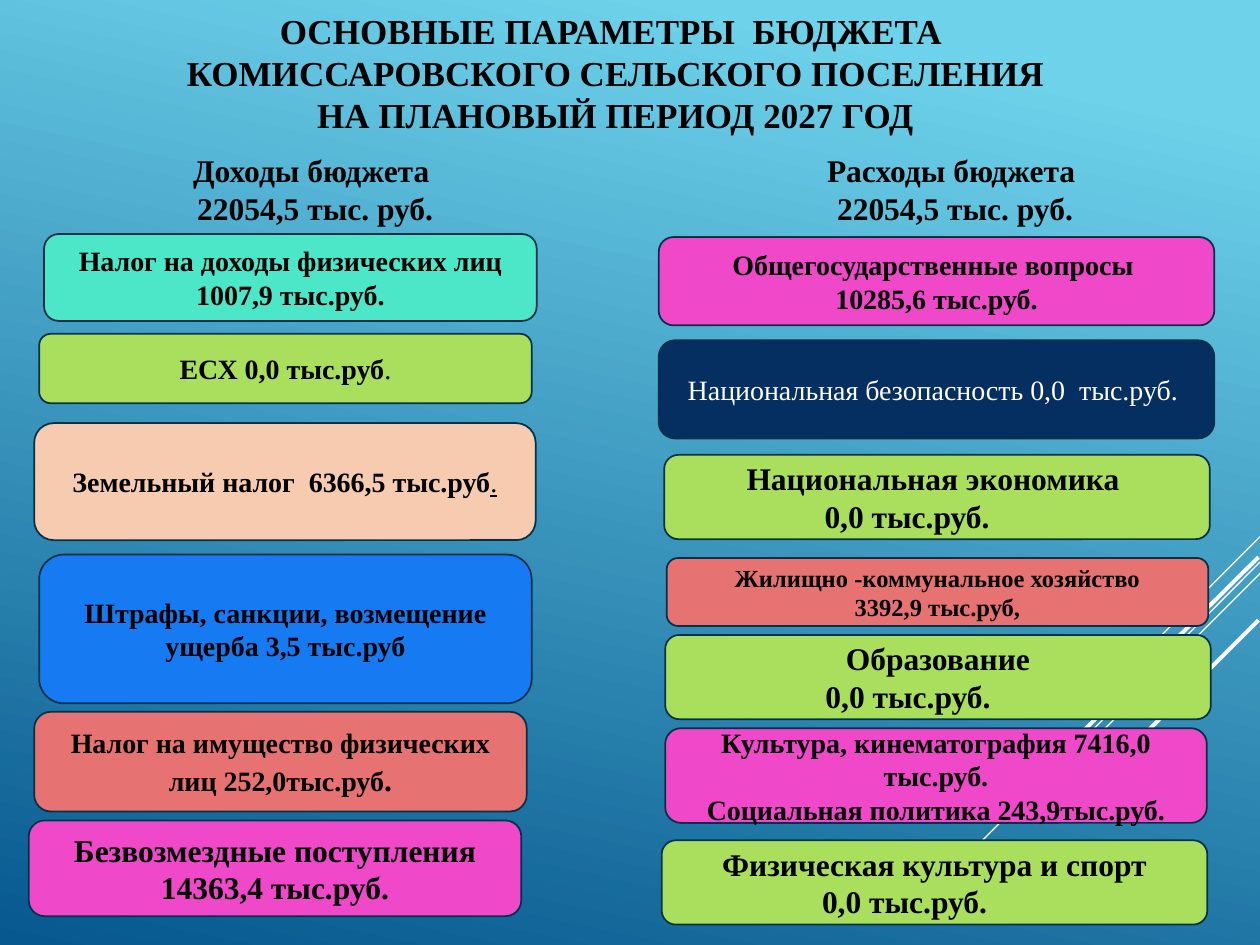
from lxml.etree import SubElement
from pptx import Presentation
from pptx.dml.color import RGBColor
from pptx.enum.shapes import MSO_CONNECTOR as CONN, MSO_SHAPE as SHAPE
from pptx.enum.text import MSO_ANCHOR as ANCHOR, PP_ALIGN as ALIGN
from pptx.oxml.ns import qn
from pptx.util import Cm, Pt

BLACK = RGBColor(0x00, 0x00, 0x00)
WHITE = RGBColor(0xFF, 0xFF, 0xFF)
SKY = RGBColor(0x6E, 0xD2, 0xEB)
DEEP = RGBColor(0x06, 0x58, 0x8E)
OUTLINE = RGBColor(0x04, 0x31, 0x48)
TEAL = RGBColor(0x4B, 0xE7, 0xC8)
GREEN = RGBColor(0xAA, 0xDF, 0x5E)
PEACH = RGBColor(0xF6, 0xCB, 0xAF)
BLUE = RGBColor(0x16, 0x7B, 0xF3)
CORAL = RGBColor(0xE6, 0x72, 0x72)
PINK = RGBColor(0xEF, 0x48, 0xC9)
NAVY = RGBColor(0x05, 0x2F, 0x61)

TITLE = ("ОСНОВНЫЕ ПАРАМЕТРЫ  БЮДЖЕТА \n КОМИССАРОВСКОГО СЕЛЬСКОГО ПОСЕЛЕНИЯ \n"
         "НА ПЛАНОВЫЙ ПЕРИОД 2027 ГОД")

HEADINGS = [
    ((0.79, 2.92, 11.13, 1.8), ["Доходы бюджета ", " 22054,5 тыс. руб. "]),
    ((14.1, 2.92, 10.31, 1.8), ["Расходы бюджета ", "22054,5 тыс. руб."]),
]

RAYS = [
    (25.4, 10.82, 23.29, 12.93, 0.75),
    (25.4, 11.33, 18.54, 18.21, 0.75),
    (25.4, 11.56, 21.03, 15.93, 0.75),
    (25.37, 11.23, 21.36, 15.21, 2.25),
    (25.37, 12.5, 22.48, 15.39, 2.25),
]

ZERO = "0,0 тыс.руб."

INCOME = [
    ((0.89, 4.72, 9.93, 1.75), TEAL, 16, ["Налог на доходы физических лиц 1007,9 тыс.руб."], {}),
    ((0.79, 6.73, 9.93, 1.4), GREEN, 16, ["ЕСХ 0,0 тыс.руб"],
     {"tail": {"bold": False}}),
    ((0.69, 8.53, 10.11, 2.36), PEACH, 16, ["Земельный налог  6366,5 тыс.руб"],
     {"tail": {"bold": False, "underline": True}}),
    ((0.79, 11.18, 9.93, 3), BLUE, 16, ["Штрафы, санкции, возмещение ущерба 3,5 тыс.руб"], {}),
    ((0.69, 14.35, 9.93, 2.01), CORAL, 16, ["Налог на имущество физических лиц 252,0тыс.руб"],
     {"tail": {"size": Pt(18)}}),
    ((0.58, 16.54, 9.93, 1.93), PINK, 18, ["Безвозмездные поступления", "14363,4 тыс.руб."], {}),
]

EXPENSES = [
    ((13.28, 4.78, 11.2, 1.78), PINK, 16,
     ["Общегосударственные вопросы ", "10285,6 тыс.руб."], {}),
    ((13.28, 6.86, 11.2, 1.98), NAVY, 16, ["Национальная безопасность 0,0  тыс.руб. "],
     {"color": WHITE, "bold": False}),
    ((13.39, 9.17, 11, 1.7), GREEN, 18, ["Национальная экономика ", ZERO], {}),
    ((13.44, 11.25, 10.92, 1.37), CORAL, 14,
     ["Жилищно -коммунальное хозяйство", "3392,9 тыс.руб,"], {}),
    ((13.41, 12.8, 11, 1.7), GREEN, 18, ["Образование", ZERO], {}),
    ((13.41, 14.68, 10.92, 1.91), PINK, 16,
     ["Культура, кинематография 7416,0 тыс.руб.", "Социальная политика 243,9тыс.руб."], {}),
    ((13.34, 16.94, 11, 1.7), GREEN, 18, ["Физическая культура и спорт", ZERO], {}),
]


class BudgetSlide:
    font = "Times New Roman"
    zero_indent = Cm(2.9)

    def __init__(self, prs):
        self.slide = prs.slides.add_slide(prs.slide_layouts[6])

    def background(self, start, end, angle):
        fill = self.slide.background.fill
        fill.gradient()
        fill.gradient_angle = 360 - angle
        for stop, color, position in zip(fill.gradient_stops, (start, end), (0.1, 1)):
            stop.color.rgb = color
            stop.position = position

    def ray(self, x1, y1, x2, y2, width):
        line = self.slide.shapes.add_connector(CONN.STRAIGHT, Cm(x1), Cm(y1), Cm(x2), Cm(y2))
        line.line.color.rgb = WHITE
        line.line.width = Pt(width)
        SubElement(line._element.spPr, qn("a:effectLst"))

    def style(self, r, color, formats):
        for name, value in formats.items():
            setattr(r.font, name, value)
        r.font.color.rgb = color

    def fill_text(self, sp, lines, size, anchor, color=BLACK, bold=True, tail=None):
        formats = {"name": self.font, "size": Pt(size), "bold": bold}
        tf = sp.text_frame
        tf.word_wrap = True
        tf.vertical_anchor = anchor
        for i, line in enumerate(lines):
            p = tf.paragraphs[0] if i == 0 else tf.add_paragraph()
            p.text = line
            p.alignment = ALIGN.CENTER
            if line == ZERO:
                p.alignment = ALIGN.LEFT
                p._p.get_or_add_pPr().set("marL", str(self.zero_indent))
            for r in p.runs:
                self.style(r, color, formats)
        if tail:
            r = p.add_run()
            r.text = "."
            self.style(r, color, {**formats, **tail})

    def text(self, box, lines, size, anchor=ANCHOR.TOP):
        sp = self.slide.shapes.add_textbox(*map(Cm, box))
        self.fill_text(sp, lines, size, anchor)

    def card(self, box, fill, size, lines, formats):
        sp = self.slide.shapes.add_shape(SHAPE.ROUNDED_RECTANGLE, *map(Cm, box))
        sp.shadow.inherit = False
        sp.fill.solid()
        sp.fill.fore_color.rgb = fill
        sp.line.color.rgb = OUTLINE
        sp.line.width = Pt(1)
        self.fill_text(sp, lines, size, ANCHOR.MIDDLE, **formats)


def main():
    prs = Presentation()
    prs.slide_width, prs.slide_height = Cm(25.4), Cm(19.05)
    s = BudgetSlide(prs)
    s.background(SKY, DEEP, 102)
    for ray in RAYS:
        s.ray(*ray)
    s.text((1.19, 0.33, 22.43, 2.26), [TITLE], 20, ANCHOR.MIDDLE)
    for box, lines in HEADINGS:
        s.text(box, lines, 18)
    for card in INCOME + EXPENSES:
        s.card(*card)
    prs.save("out.pptx")


if __name__ == "__main__":
    main()
